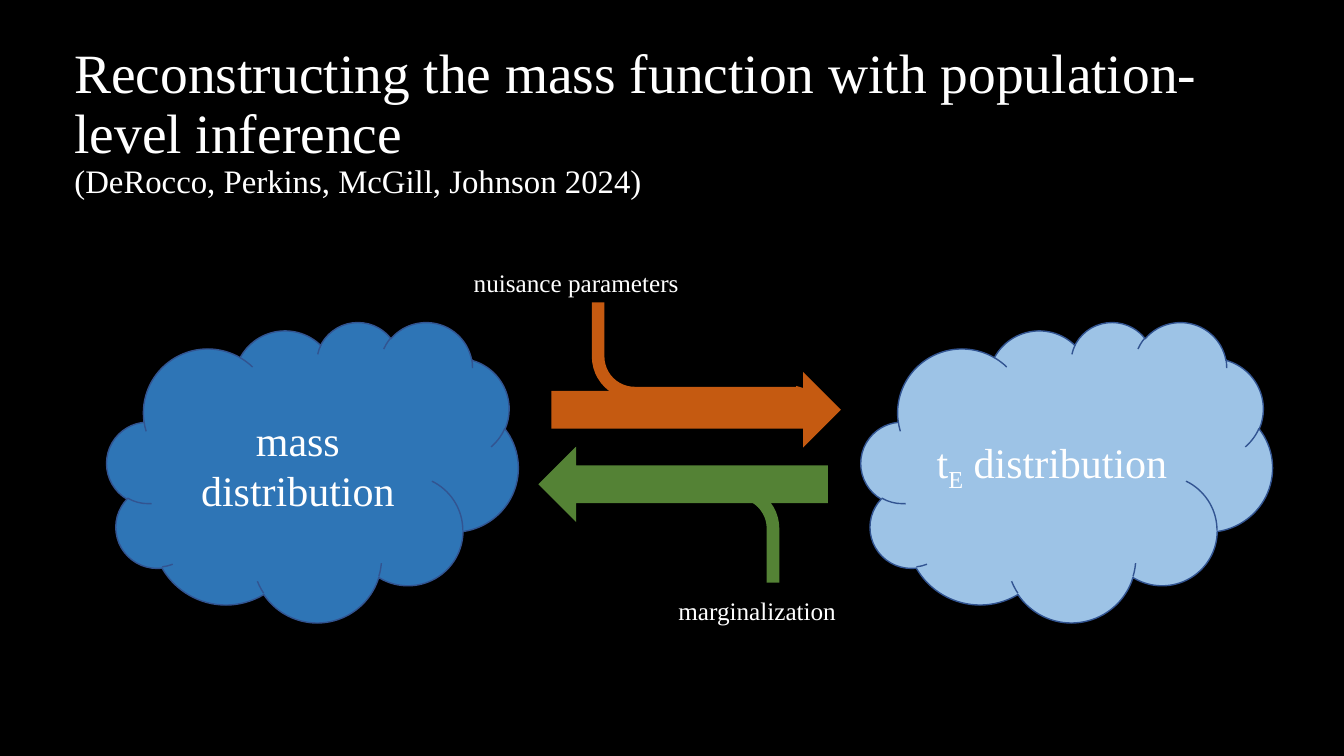
from pptx import Presentation
from pptx.dml.color import RGBColor
from pptx.enum.shapes import MSO_SHAPE
from pptx.enum.text import MSO_ANCHOR, MSO_AUTO_SIZE, PP_ALIGN
from pptx.util import Inches, Pt

FONT = "Times New Roman"
COLORS = {
    "back": "000000",
    "text": "FFFFFF",
    "mass": "2E75B6",
    "time": "9DC3E6",
    "edge": "325491",
    "forward": "C55A11",
    "inverse": "548235",
}
BEND = (0.129, 0.073, 0.25, 0.438)


def color(name):
    return RGBColor.from_string(COLORS[name])


def style(font, size=None):
    font.name = FONT
    font.color.rgb = color("text")
    if size:
        font.size = Pt(size)


def add_title(slide, title, cite):
    box = slide.shapes.add_textbox(
        Inches(0.64), Inches(0.5), Inches(11.97), Inches(1.45))
    frame = box.text_frame
    frame.word_wrap = True
    frame.vertical_anchor = MSO_ANCHOR.MIDDLE
    para = frame.paragraphs[0]
    para.line_spacing = 0.9
    style(para.font)
    for text, size in ((title, 39.6), (cite, 23.4)):
        if para.runs:
            para.add_line_break()
        run = para.add_run()
        run.text = text
        run.font.size = Pt(size)


def add_shape(slide, kind, left, top, width, height, fill):
    shape = slide.shapes.add_shape(
        kind, Inches(left), Inches(top), Inches(width), Inches(height))
    shape.shadow.inherit = False
    shape.fill.solid()
    shape.fill.fore_color.rgb = color(fill)
    shape.line.fill.background()
    return shape


def add_cloud(slide, left, fill, parts):
    """Draw a cloud; parts are (text, baseline shift) pairs."""
    cloud = add_shape(slide, MSO_SHAPE.CLOUD, left, 3.19, 4.08, 2.98, fill)
    cloud.line.color.rgb = color("edge")
    cloud.line.width = Pt(1)
    frame = cloud.text_frame
    frame.vertical_anchor = MSO_ANCHOR.MIDDLE
    para = frame.paragraphs[0]
    para.alignment = PP_ALIGN.CENTER
    style(para.font, 30)
    for text, shift in parts:
        run = para.add_run()
        run.text = text
        if shift:
            run.font._element.set("baseline", str(shift))


def add_arrow(slide, left, top, turn, fill):
    arrow = add_shape(
        slide, MSO_SHAPE.DOWN_ARROW, left, top, 0.75, 2.87, fill)
    arrow.rotation = turn


def add_bend(slide, left, top, turn, fill):
    bend = add_shape(slide, MSO_SHAPE.BENT_ARROW, left, top, 2.27, 0.97, fill)
    for i, value in enumerate(BEND):
        bend.adjustments[i] = value
    bend.rotation = turn
    bend._element.spPr.xfrm.set("flipH", "1")


def add_label(slide, left, top, width, text):
    box = slide.shapes.add_textbox(
        Inches(left), Inches(top), Inches(width), Inches(0.4))
    frame = box.text_frame
    frame.word_wrap = False
    frame.auto_size = MSO_AUTO_SIZE.SHAPE_TO_FIT_TEXT
    para = frame.paragraphs[0]
    para.text = text
    style(para.font, 18)


def main():
    deck = Presentation()
    deck.slide_width = Inches(13.33)
    deck.slide_height = Inches(7.5)
    slide = deck.slides.add_slide(deck.slide_layouts[6])
    slide.background.fill.solid()
    slide.background.fill.fore_color.rgb = color("back")

    add_title(
        slide,
        "Reconstructing the mass function with population-level inference",
        "(DeRocco, Perkins, McGill, Johnson 2024)")

    # Distributions
    add_cloud(slide, 1.06, "mass", [("mass distribution", 0)])
    add_cloud(slide, 8.54, "time",
              [("t", 0), ("E", -25000), (" distribution", 0)])

    # Forward path
    add_arrow(slide, 6.53, 2.63, 270, "forward")
    add_bend(slide, 5.87, 3, 180, "forward")
    add_label(slide, 4.6, 2.6, 2.54, "nuisance parameters")

    # Inverse path
    add_arrow(slide, 6.4, 3.37, 90, "inverse")
    add_bend(slide, 5.46, 4.81, 0, "inverse")
    add_label(slide, 6.63, 5.86, 1.93, "marginalization")

    deck.save("out.pptx")


if __name__ == "__main__":
    main()
